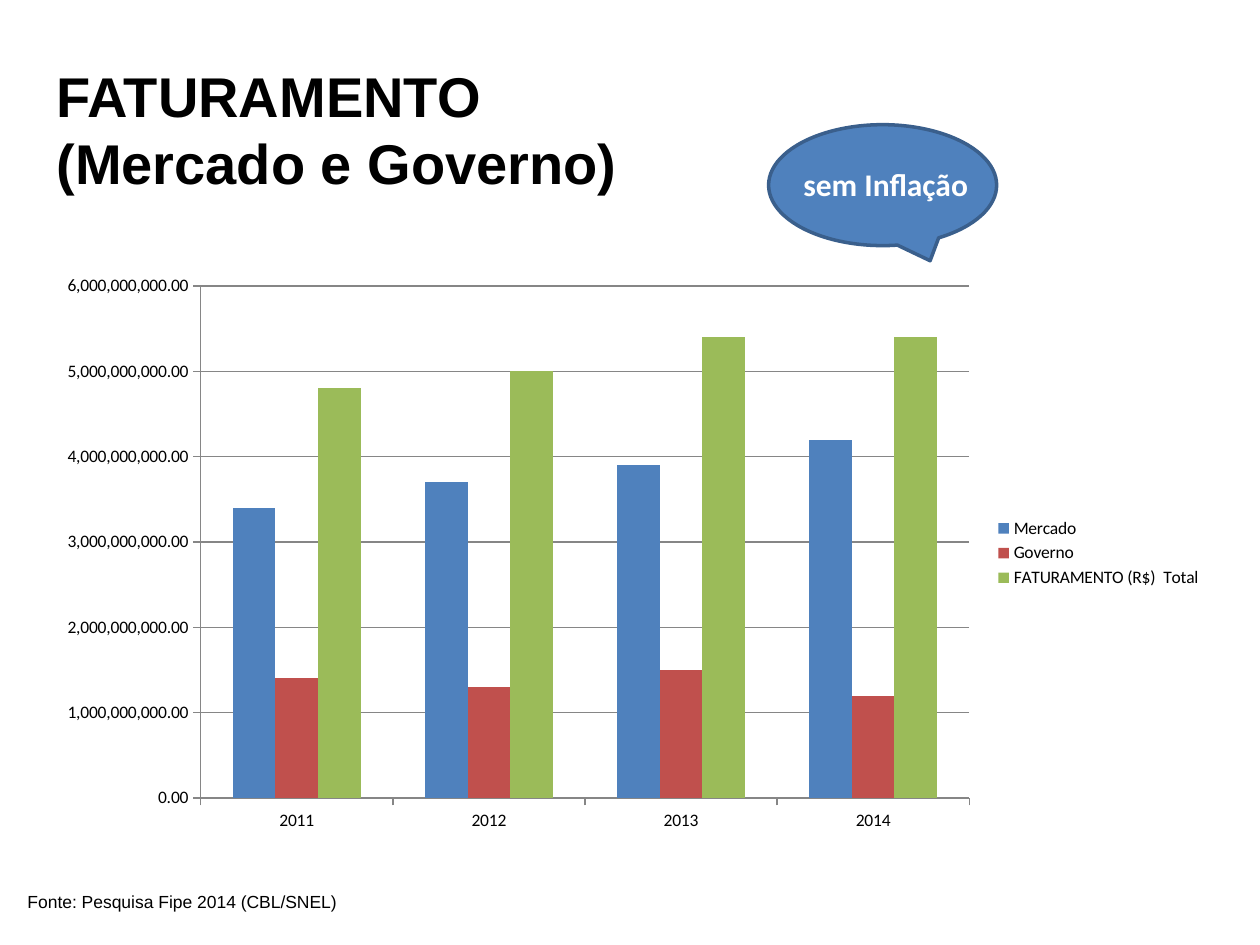
from dataclasses import dataclass

from pptx import Presentation
from pptx.chart.data import CategoryChartData
from pptx.dml.color import RGBColor
from pptx.enum.chart import XL_CHART_TYPE, XL_LEGEND_POSITION, XL_TICK_MARK
from pptx.enum.shapes import MSO_SHAPE
from pptx.enum.text import MSO_AUTO_SIZE, PP_ALIGN
from pptx.slide import Slide
from pptx.util import Inches, Pt


@dataclass(frozen=True)
class Theme:
    heading_font: str = "Arial"
    body_font: str = "Calibri"
    text: RGBColor = RGBColor(0, 0, 0)
    light_text: RGBColor = RGBColor(255, 255, 255)
    blue: RGBColor = RGBColor.from_string("4F81BD")
    red: RGBColor = RGBColor.from_string("C0504D")
    green: RGBColor = RGBColor.from_string("9BBB59")
    outline: RGBColor = RGBColor.from_string("3A5F8C")
    grid: RGBColor = RGBColor.from_string("868686")
    title_size: Pt = Pt(32)
    callout_size: Pt = Pt(18)
    small_size: Pt = Pt(10)


@dataclass(frozen=True)
class Box:
    left: float
    top: float
    width: float
    height: float

    def lengths(self) -> list[Inches]:
        return [Inches(side) for side in (self.left, self.top, self.width, self.height)]


@dataclass(frozen=True)
class Label:
    box: Box
    lines: tuple[str, ...]
    font: str
    size: Pt
    color: RGBColor
    bold: bool = False
    wrap: bool = True
    alignment: PP_ALIGN = PP_ALIGN.LEFT


@dataclass(frozen=True)
class Revenue:
    """Yearly revenue of one source, in billions."""
    name: str
    billions: tuple[float, ...]
    color: RGBColor


THEME = Theme()
BILLION = 1_000_000_000
YEARS = ("2011", "2012", "2013", "2014")
REVENUES = (
    Revenue("Mercado", (3.4, 3.7, 3.9, 4.2), THEME.blue),
    Revenue("Governo", (1.4, 1.3, 1.5, 1.2), THEME.red),
    Revenue("FATURAMENTO (R$)  Total", (4.8, 5.0, 5.4, 5.4), THEME.green),
)
TITLE = Label(Box(0.35, 0.44, 6.54, 1.18), ("FATURAMENTO", "(Mercado e Governo)"),
              THEME.heading_font, THEME.title_size, THEME.text, bold=True)
SOURCE = Label(Box(0.12, 7.02, 2.67, 0.27), ("Fonte: Pesquisa Fipe 2014 (CBL/SNEL)",),
               THEME.heading_font, THEME.small_size, THEME.text, wrap=False)
CALLOUT = Label(Box(6.2, 1.26, 1.66, 0.4), ("sem Inflação",), THEME.body_font,
                THEME.callout_size, THEME.light_text, bold=True,
                alignment=PP_ALIGN.CENTER)


def add_label(slide: Slide, label: Label) -> None:
    frame = slide.shapes.add_textbox(*label.box.lengths()).text_frame
    frame.word_wrap = label.wrap
    frame.auto_size = MSO_AUTO_SIZE.SHAPE_TO_FIT_TEXT
    frame.text = "\n".join(label.lines)
    for paragraph in frame.paragraphs:
        paragraph.alignment = label.alignment
        paragraph.font.name = label.font
        paragraph.font.size = label.size
        paragraph.font.bold = label.bold
        paragraph.font.color.rgb = label.color


def add_revenue_chart(slide: Slide, box: Box) -> None:
    data = CategoryChartData()
    data.categories = YEARS
    for revenue in REVENUES:
        data.add_series(revenue.name, [round(value * BILLION) for value in revenue.billions])
    chart = slide.shapes.add_chart(
        XL_CHART_TYPE.COLUMN_CLUSTERED, *box.lengths(), data).chart
    chart.has_title = False
    chart.font.name = THEME.body_font
    chart.font.size = THEME.small_size
    chart.font.color.rgb = THEME.text
    chart.has_legend = True
    chart.legend.position = XL_LEGEND_POSITION.RIGHT
    chart.legend.include_in_layout = False

    plot = chart.plots[0]
    plot.gap_width = 150
    plot.vary_by_categories = False
    for series, revenue in zip(plot.series, REVENUES):
        series.format.fill.solid()
        series.format.fill.fore_color.rgb = revenue.color
        series.invert_if_negative = False

    value_axis = chart.value_axis
    value_axis.minimum_scale = 0
    value_axis.maximum_scale = 6 * BILLION
    value_axis.major_unit = BILLION
    value_axis.has_major_gridlines = True
    value_axis.tick_labels.number_format = "#,##0.00"
    value_axis.tick_labels.number_format_is_linked = False
    for axis in (chart.category_axis, value_axis):
        axis.major_tick_mark = XL_TICK_MARK.OUTSIDE
    for part in (chart.category_axis, value_axis, value_axis.major_gridlines):
        part.format.line.color.rgb = THEME.grid
        part.format.line.width = Pt(0.75)


def add_callout(slide: Slide, box: Box) -> None:
    """Draw the balloon mirrored, so that its tail points to the lower right."""
    balloon = slide.shapes.add_shape(MSO_SHAPE.OVAL_CALLOUT, *box.lengths())
    balloon.shadow.inherit = False
    balloon.fill.solid()
    balloon.fill.fore_color.rgb = THEME.blue
    balloon.line.color.rgb = THEME.outline
    balloon.line.width = Pt(2)
    balloon.element.spPr.xfrm.set("flipH", "1")


def main() -> None:
    presentation = Presentation()
    presentation.slide_width = Inches(10)
    presentation.slide_height = Inches(7.5)
    slide = presentation.slides.add_slide(presentation.slide_layouts[6])
    add_revenue_chart(slide, Box(0.35, 2.1, 9.29, 4.58))
    add_label(slide, TITLE)
    add_label(slide, SOURCE)
    add_callout(slide, Box(6.1, 0.99, 1.81, 0.96))
    add_label(slide, CALLOUT)
    presentation.save("out.pptx")


if __name__ == "__main__":
    main()
